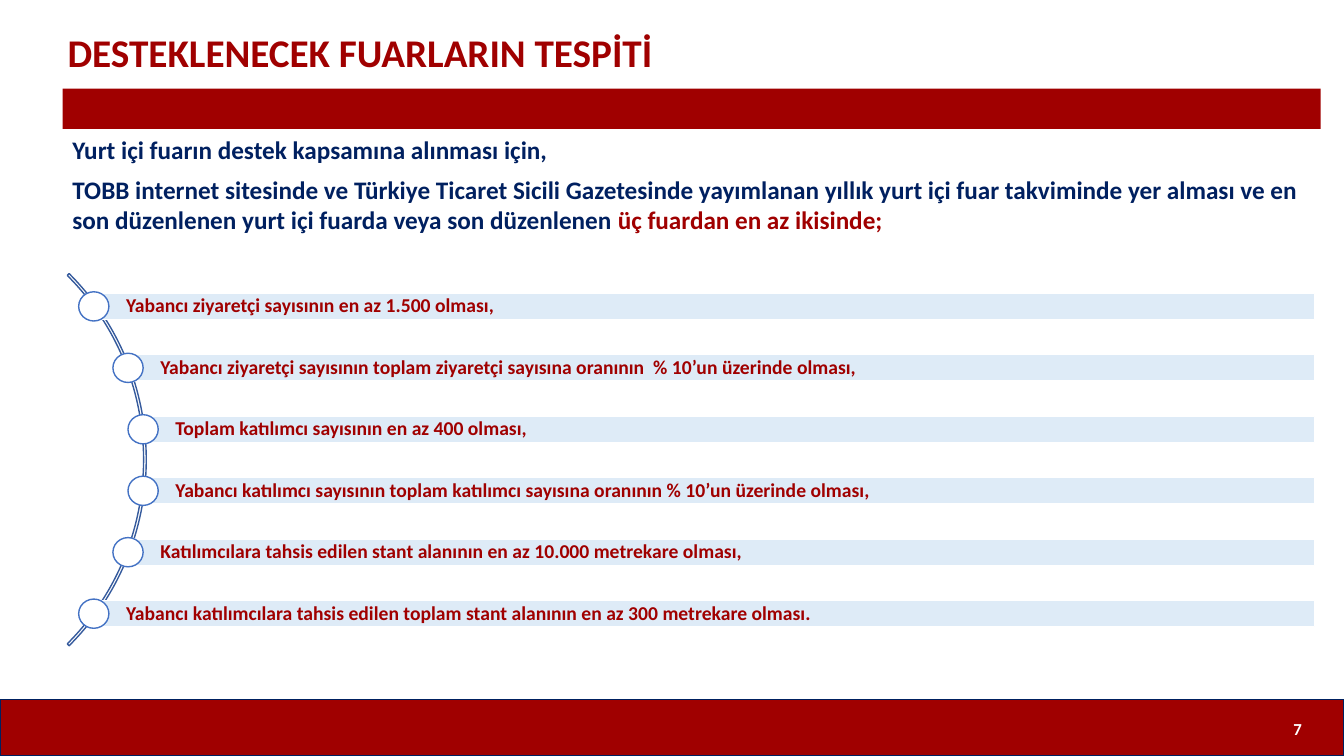
from pptx import Presentation, util as u
from pptx.dml.color import RGBColor
from pptx.enum import shapes, text

W, H = u.Inches(13.333), u.Inches(7.5)
RED, NAVY, BLUE, PALE, WHITE = "A00000", "002060", "4472C4", "DEEBF7", "FFFFFF"
LEFT, WIDTH = 4.65, 93.62  # main column, in percent of the slide width

CONDITIONS = [
    "Yabancı ziyaretçi sayısının en az 1.500 olması,",
    "Yabancı ziyaretçi sayısının toplam ziyaretçi sayısına oranının  % 10’un üzerinde olması,",
    "Toplam katılımcı sayısının en az 400 olması,",
    "Yabancı katılımcı sayısının toplam katılımcı sayısına oranının % 10’un üzerinde olması,",
    "Katılımcılara tahsis edilen stant alanının en az 10.000 metrekare olması,",
    "Yabancı katılımcılara tahsis edilen toplam stant alanının en az 300 metrekare olması.",
]


def color(value):
    return RGBColor.from_string(value)


def box(x, y, w, h):
    """Turn percentages of the slide's size into lengths."""
    return int(W * x / 100), int(H * y / 100), int(W * w / 100), int(H * h / 100)


def write(s, *runs, size=18, anchor=text.MSO_ANCHOR.TOP, align=text.PP_ALIGN.LEFT,
          spacing=None, insets=(0.1, 0.05, 0.1, 0.05)):
    """Fill a shape with one paragraph of (wording, colour) runs."""
    tf = s.text_frame
    tf.word_wrap = True
    tf.auto_size = text.MSO_AUTO_SIZE.NONE
    tf.vertical_anchor = anchor
    tf.margin_left, tf.margin_top, tf.margin_right, tf.margin_bottom = map(u.Inches, insets)
    p = tf.paragraphs[0]
    p.alignment, p.line_spacing = align, spacing
    for wording, ink in runs:
        r = p.add_run()
        r.text = wording
        r.font.name, r.font.size, r.font.bold = "Calibri", u.Pt(size), True
        r.font.color.rgb = color(ink)


def shape(sp, kind, area, fill=None, line=None):
    s = sp.add_shape(kind, *box(*area))
    s.shadow.inherit = False
    if fill:
        s.fill.solid()
        s.fill.fore_color.rgb = color(fill)
    else:
        s.fill.background()
    if line:
        s.line.color.rgb = color(line)
        s.line.width = u.Pt(1)
    else:
        s.line.fill.background()
    return s


def text_box(sp, area, *runs, **fmt):
    write(sp.add_textbox(*box(*area)), *runs, **fmt)


def condition(sp, x, y, wording):
    """Bar starting at the centre (x, y) of its round marker."""
    bar_h, dot_w, dot_h, right = 3.47, 2.25, 3.87, 97.82
    bar = shape(sp, shapes.MSO_SHAPE.RECTANGLE, (x, y - bar_h / 2, right - x, bar_h), PALE, WHITE)
    write(bar, (wording, RED), size=14, anchor=text.MSO_ANCHOR.MIDDLE, spacing=0.9,
          insets=(0.32, 0.04, 0.04, 0.04))
    shape(sp, shapes.MSO_SHAPE.OVAL, (x - dot_w / 2, y - dot_h / 2, dot_w, dot_h), WHITE, BLUE)


def main():
    prs = Presentation()
    prs.slide_width, prs.slide_height = W, H
    slide = prs.slides.add_slide(prs.slide_layouts[5])
    sp = slide.shapes

    # Footer and page number
    shape(sp, shapes.MSO_SHAPE.RECTANGLE, (0, 92.53, 100, 7.47), RED, NAVY)
    text_box(sp, (94.75, 92.53, 3.6, 7.87), ("7", WHITE), size=12,
             anchor=text.MSO_ANCHOR.MIDDLE, align=text.PP_ALIGN.CENTER)

    # Title and band
    shape(sp, shapes.MSO_SHAPE.RECTANGLE, (LEFT, 11.73, WIDTH, 5.33), RED)
    title = sp.title
    title.left, title.top, title.width, title.height = box(LEFT, 0, 58.44, 14.4)
    write(title, ("DESTEKLENECEK FUARLARIN TESPİTİ", RED), size=28,
          anchor=text.MSO_ANCHOR.MIDDLE, spacing=0.9, insets=(0.05,) * 4)

    # Introduction
    text_box(sp, (LEFT, 17.07, WIDTH, 5.33),
             ("Yurt içi fuarın destek kapsamına alınması için,", NAVY))
    text_box(sp, (LEFT, 22.4, WIDTH, 9.47),
             ("TOBB internet sitesinde ve Türkiye Ticaret Sicili Gazetesinde yayımlanan yıllık "
              "yurt içi fuar takviminde yer alması ve en son düzenlenen yurt içi fuarda veya "
              "son düzenlenen ", NAVY),
             ("üç fuardan en az ikisinde;", RED))

    # Arc with the conditions along it
    arc = shape(sp, shapes.MSO_SHAPE.BLOCK_ARC, (-28.28, 26, 39.16, 69.6), line="365B9D")
    for i, value in enumerate((189, 27, 0.005)):
        arc.adjustments[i] = value
    upper = [6.98, 9.53, 10.65]
    for i, (x, wording) in enumerate(zip(upper + upper[::-1], CONDITIONS)):
        condition(sp, x, 40.53 + 8.13 * i, wording)

    prs.save("out.pptx")


if __name__ == "__main__":
    main()
